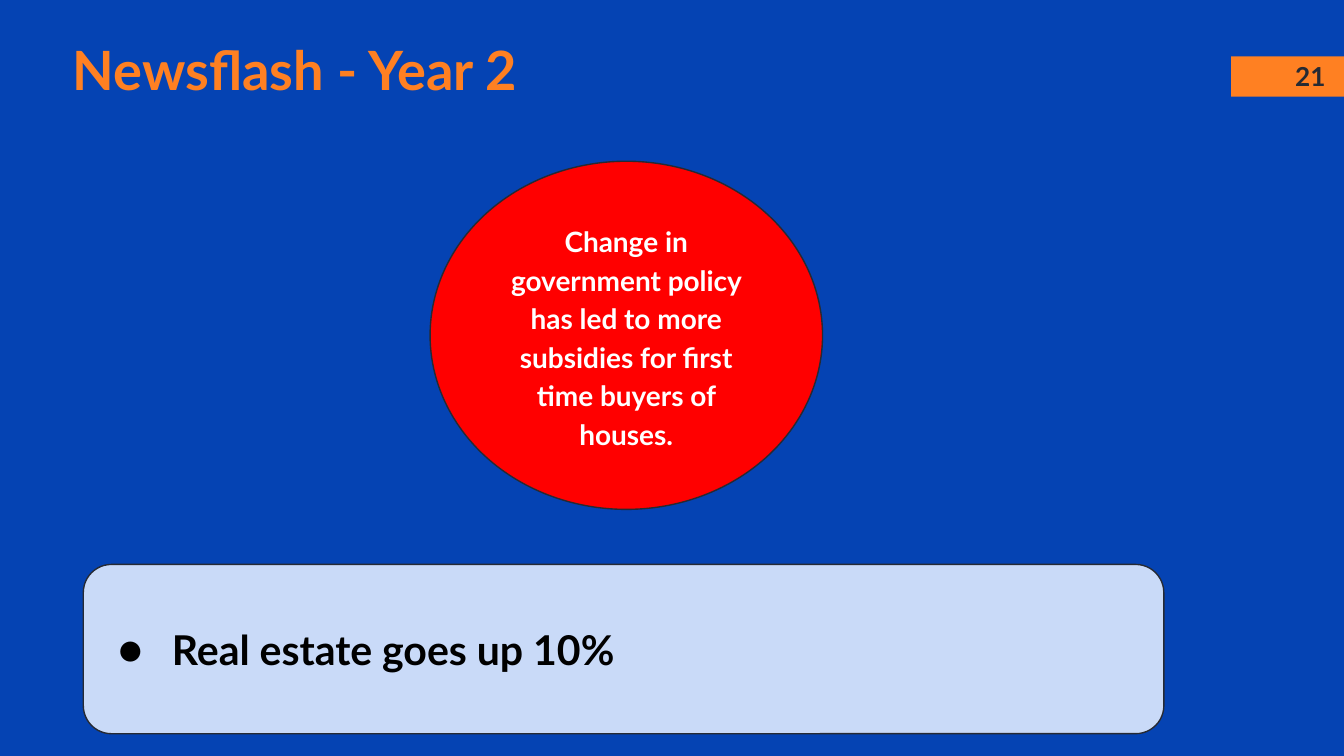
from dataclasses import dataclass

from lxml.etree import SubElement
from pptx import Presentation
from pptx.dml.color import RGBColor
from pptx.enum.shapes import MSO_SHAPE
from pptx.enum.text import MSO_ANCHOR, MSO_AUTO_SIZE, PP_ALIGN
from pptx.oxml.ns import qn
from pptx.util import Inches, Pt


@dataclass(frozen=True)
class Theme:
    font: str = "Lato"
    background: str = "0543B3"
    accent: str = "FF8022"
    ink: str = "262A33"
    alert: str = "FF0000"
    panel: str = "C9DAF8"
    white: str = "FFFFFF"
    black: str = "000000"
    title_size: int = 29
    list_size: int = 22
    news_size: int = 15
    number_size: int = 14
    line_spacing: float = 1.15


THEME = Theme()


def color(code):
    return RGBColor.from_string(code)


def place(shape, left, top, width, height):
    shape.left, shape.top = Inches(left), Inches(top)
    shape.width, shape.height = Inches(width), Inches(height)


def write(shape, text, size, ink, align=PP_ALIGN.CENTER,
          anchor=MSO_ANCHOR.MIDDLE, inset=0.1, spacing=None):
    frame = shape.text_frame
    frame.word_wrap = True
    frame.auto_size = MSO_AUTO_SIZE.NONE
    frame.vertical_anchor = anchor
    frame.margin_left = frame.margin_right = Inches(inset)
    frame.margin_top = frame.margin_bottom = Inches(inset)
    para = frame.paragraphs[0]
    para.alignment = align
    para.line_spacing = spacing
    span = para.add_run()
    span.text = text
    span.font.name = THEME.font
    span.font.size = Pt(size)
    span.font.bold = True
    span.font.color.rgb = color(ink)


def add_bullet(para, indent, hanging):
    properties = para._p.get_or_add_pPr()
    properties.set("marL", str(Inches(indent)))
    properties.set("indent", str(-Inches(hanging)))
    bullet_color = SubElement(properties, qn("a:buClr"))
    SubElement(bullet_color, qn("a:srgbClr")).set("val", THEME.black)
    SubElement(properties, qn("a:buFont")).set("typeface", THEME.font)
    SubElement(properties, qn("a:buChar")).set("char", "●")


def add_filled_shape(page, kind, bounds, fill, outline=None):
    shape = page.shapes.add_shape(kind, *map(Inches, bounds))
    shape.shadow.inherit = False
    shape.fill.solid()
    shape.fill.fore_color.rgb = color(fill)
    if outline:
        shape.line.color.rgb = color(outline)
        shape.line.width = Pt(0.75)
    else:
        shape.line.fill.background()
    return shape


def add_page_number(page, number):
    add_filled_shape(page, MSO_SHAPE.RECTANGLE, (9.16, 0.42, 0.84, 0.3), THEME.accent)
    box = page.shapes.add_textbox(*map(Inches, (9.49, 0.44, 0.52, 0.25)))
    write(box, number, THEME.number_size, THEME.ink)


def add_title(page, text):
    title = page.shapes.title
    place(title, 0.54, 0.27, 8.13, 0.85)
    write(title, text, THEME.title_size, THEME.accent,
          PP_ALIGN.LEFT, MSO_ANCHOR.TOP, inset=0)


def add_news(page, text):
    circle = add_filled_shape(page, MSO_SHAPE.OVAL, (3.2, 1.2, 2.92, 2.59),
                              THEME.alert, THEME.ink)
    write(circle, text, THEME.news_size, THEME.white, spacing=THEME.line_spacing)


def add_effect(page, text):
    panel = add_filled_shape(page, MSO_SHAPE.ROUNDED_RECTANGLE,
                             (0.62, 4.2, 8.04, 1.26), THEME.panel, THEME.ink)
    add_bullet(panel.text_frame.paragraphs[0], indent=0.5, hanging=0.4)
    write(panel, text, THEME.list_size, THEME.black,
          PP_ALIGN.LEFT, spacing=THEME.line_spacing)
    panel.text_frame.margin_bottom = Inches(0.16)


def main():
    deck = Presentation()
    deck.slide_width = Inches(10)
    deck.slide_height = deck.slide_width * 9 // 16
    page = deck.slides.add_slide(deck.slide_layouts[5])
    page.background.fill.solid()
    page.background.fill.fore_color.rgb = color(THEME.background)
    add_page_number(page, "21")
    add_title(page, "Newsflash - Year 2")
    add_news(page, "Change in government policy has led to more subsidies "
                   "for first time buyers of houses.")
    add_effect(page, "Real estate goes up 10%")
    deck.save("out.pptx")


if __name__ == "__main__":
    main()
